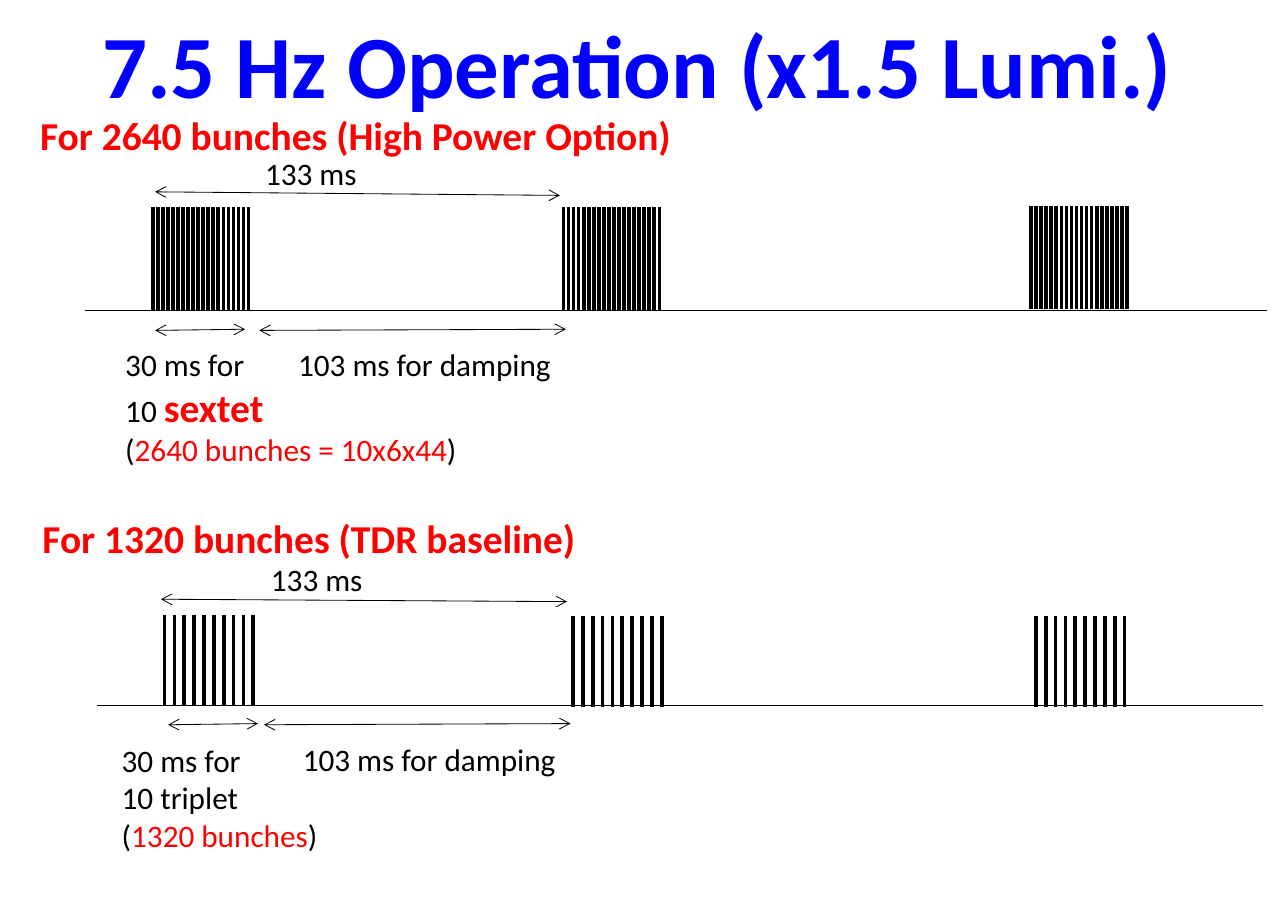
from typing import NamedTuple

from lxml import etree
from pptx import Presentation
from pptx import util as u
from pptx.dml.color import RGBColor
from pptx.enum import shapes, text
from pptx.oxml.ns import qn

CELL = u.Inches(0.1)  # columns and rows of the layout grid
COLUMNS, ROWS = 108.8, 77.6
FONT = "Calibri"
COLOURS = {"title": "0000FF", "accent": "FF0000", "ink": "000000"}


class Style(NamedTuple):
    size: float
    colour: str
    bold: bool = False


TITLE = Style(54, "title", True)
HEADING = Style(24, "accent", True)
LABEL = Style(19, "ink")
COUNT = Style(19, "accent")


class Span(NamedTuple):
    wording: str
    style: Style = LABEL


class Box(NamedTuple):
    column: float
    row: float
    width: float
    height: float


class Line(NamedTuple):
    column: float
    row: float
    end_column: float
    end_row: float


class Caption(NamedTuple):
    box: Box
    paragraphs: list[list[Span]]
    wraps: bool = False


class Train(NamedTuple):
    column: float
    row: float


class Timeline(NamedTuple):
    axis: Line
    trains: list[Train]
    pulses: int
    train_width: float
    pulse_height: float
    durations: list[Line]
    captions: list[Caption]


TIMELINES = [
    Timeline(
        axis=Line(7.2, 26.2, 107, 26.2),
        trains=[Train(12.9, 17.5), Train(47.6, 17.5), Train(87.1, 17.4)],
        pulses=20,
        train_width=8.1,
        pulse_height=8.7,
        durations=[
            Line(13.1, 16.2, 47.3, 16.5),
            Line(13.1, 27.9, 20.7, 27.8),
            Line(21.9, 27.9, 47.8, 27.8),
        ],
        captions=[
            Caption(Box(2.4, 8.9, 58, 5),
                    [[Span("For 2640 bunches (High Power Option)", HEADING)]], True),
            Caption(Box(21.4, 12.5, 9.9, 4.2), [[Span("133 ms")]]),
            Caption(Box(9.6, 28.7, 30.3, 11.4), [
                [Span("30 ms for")],
                [Span("10 "), Span("sextet", HEADING)],
                [Span("("), Span("2640 bunches = 10x6x44", COUNT), Span(")")],
            ]),
            Caption(Box(24.2, 28.7, 23.6, 4.2), [[Span("103 ms for damping")]]),
        ],
    ),
    Timeline(
        axis=Line(8.2, 59.6, 106.7, 59.6),
        trains=[Train(13.9, 51.9), Train(48.4, 52), Train(87.5, 52)],
        pulses=10,
        train_width=7.5,
        pulse_height=7.7,
        durations=[
            Line(13.6, 50.6, 47.9, 50.8),
            Line(14.2, 61.2, 21.8, 61.1),
            Line(22.3, 61.2, 48.2, 61.1),
        ],
        captions=[
            Caption(Box(2.6, 42.9, 50.8, 5),
                    [[Span("For 1320 bunches (TDR baseline)", HEADING)]], True),
            Caption(Box(21.9, 46.8, 9.9, 4.2), [[Span("133 ms")]]),
            Caption(Box(9.3, 62.1, 18.7, 10.6), [
                [Span("30 ms for")],
                [Span("10 triplet")],
                [Span("("), Span("1320 bunches", COUNT), Span(")")],
            ]),
            Caption(Box(24.6, 62, 23.6, 4.2), [[Span("103 ms for damping")]]),
        ],
    ),
]


def grid(cells: float) -> int:
    """Turn a count of grid cells into a length."""
    return round(cells * CELL)


def format_run(run, style: Style) -> None:
    run.font.name = FONT
    run.font.size = u.Pt(style.size)
    run.font.bold = style.bold
    run.font.color.rgb = RGBColor.from_string(COLOURS[style.colour])


def draw_line(parent, line: Line, weight: float, arrows: bool = False) -> None:
    connector = parent.add_connector(
        shapes.MSO_CONNECTOR.STRAIGHT, *(grid(cells) for cells in line))
    connector.line.width = u.Pt(weight)
    connector.line.color.rgb = RGBColor.from_string(COLOURS["ink"])
    properties = connector.line._get_or_add_ln()
    if arrows:
        for end in ("a:headEnd", "a:tailEnd"):
            etree.SubElement(properties, qn(end), type="arrow")
    etree.SubElement(properties.getparent(), qn("a:effectLst"))


def draw_train(slide, train: Train, timeline: Timeline) -> None:
    """Draw one burst of evenly spaced pulses as a group."""
    burst = slide.shapes.add_group_shape().shapes
    pitch = timeline.train_width / (timeline.pulses - 1)
    for pulse in range(timeline.pulses):
        column = train.column + pulse * pitch
        draw_line(burst, Line(column, train.row, column,
                              train.row + timeline.pulse_height), 2.25)


def draw_caption(slide, caption: Caption) -> None:
    frame = slide.shapes.add_textbox(*(grid(cells) for cells in caption.box)).text_frame
    frame.word_wrap = caption.wraps
    for index, spans in enumerate(caption.paragraphs):
        paragraph = frame.add_paragraph() if index else frame.paragraphs[0]
        for span in spans:
            run = paragraph.add_run()
            run.text = span.wording
            format_run(run, span.style)


def draw_title(slide, wording: str, box: Box) -> None:
    title = slide.shapes.title
    title.left, title.top, title.width, title.height = (grid(cells) for cells in box)
    frame = title.text_frame
    frame.text = wording
    frame.auto_size = text.MSO_AUTO_SIZE.NONE
    frame.vertical_anchor = text.MSO_ANCHOR.TOP
    frame.paragraphs[0].alignment = text.PP_ALIGN.CENTER
    format_run(frame.paragraphs[0].runs[0], TITLE)


def draw_timeline(slide, timeline: Timeline) -> None:
    draw_line(slide.shapes, timeline.axis, 0.75)
    for train in timeline.trains:
        draw_train(slide, train, timeline)
    for duration in timeline.durations:
        draw_line(slide.shapes, duration, 0.5, arrows=True)
    for caption in timeline.captions:
        draw_caption(slide, caption)


def main() -> None:
    presentation = Presentation()
    presentation.slide_width, presentation.slide_height = grid(COLUMNS), grid(ROWS)
    slide = presentation.slides.add_slide(presentation.slide_layouts.get_by_name("Title Only"))
    draw_title(slide, "7.5 Hz Operation (x1.5 Lumi.)", Box(0, 0.3, 107.7, 10.2))
    for timeline in TIMELINES:
        draw_timeline(slide, timeline)
    presentation.save("out.pptx")


if __name__ == "__main__":
    main()
